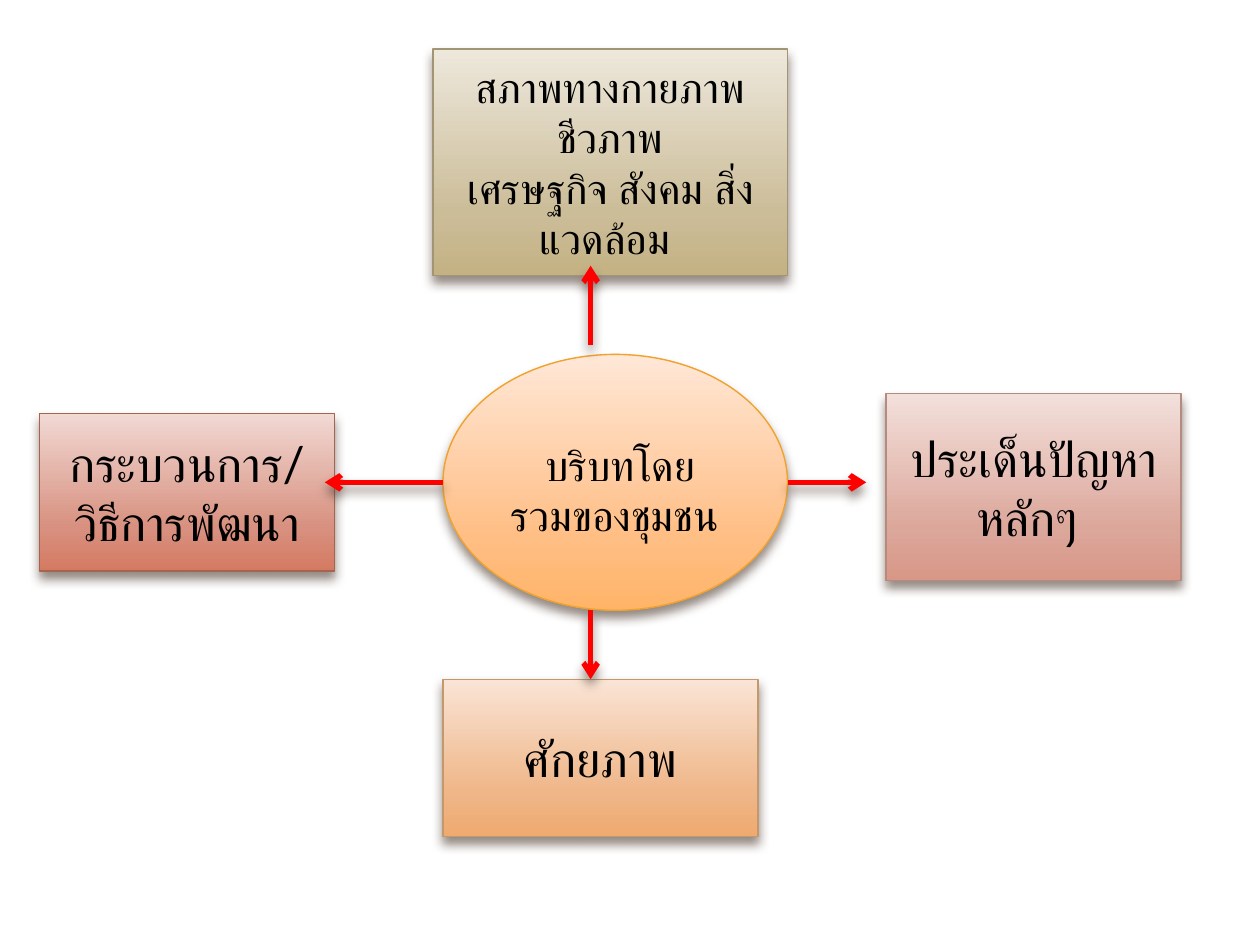
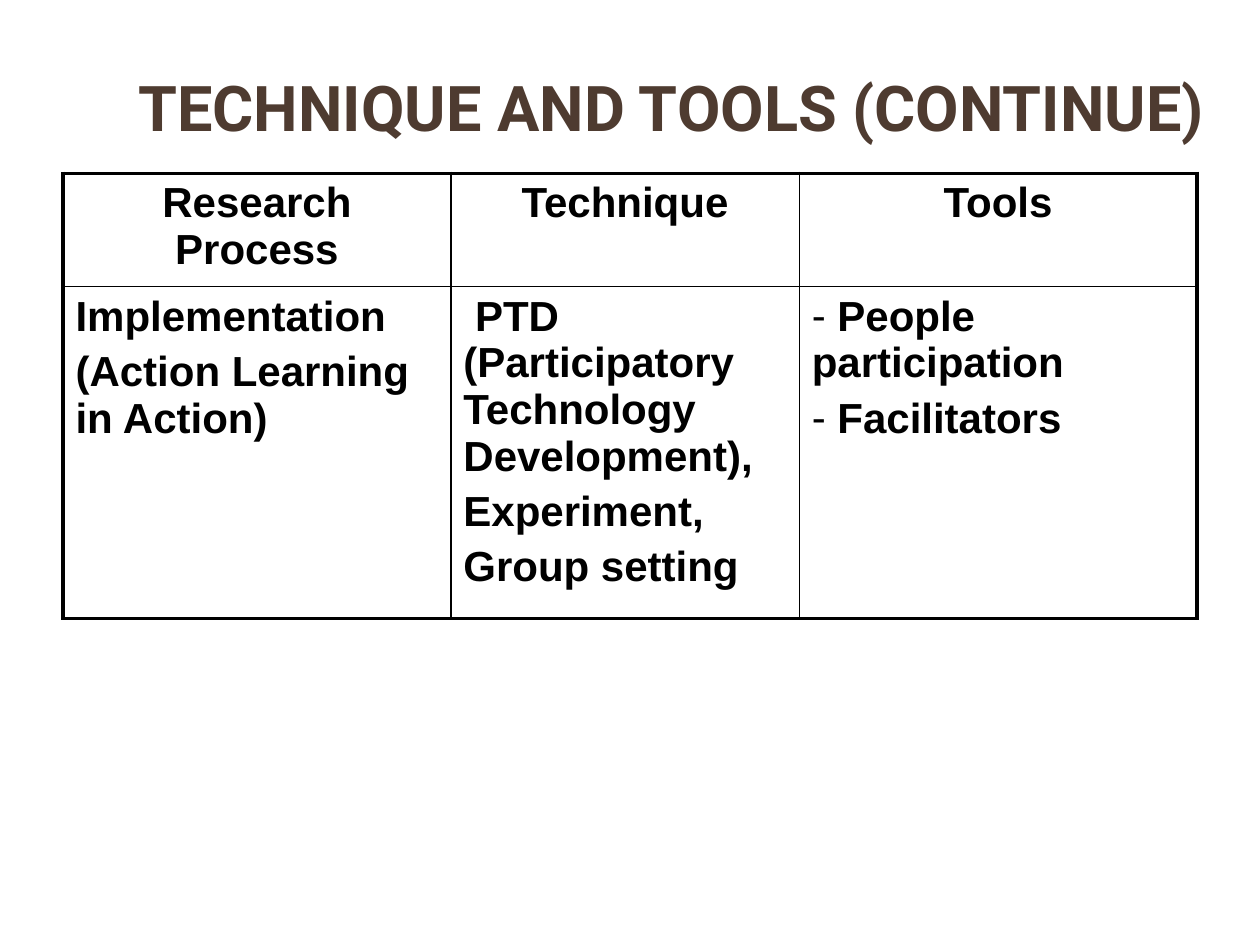
from dataclasses import dataclass
from typing import Any

from lxml.etree import SubElement
from pptx import Presentation
from pptx.dml.color import RGBColor
from pptx.enum.shapes import MSO_CONNECTOR, MSO_SHAPE
from pptx.enum.text import MSO_ANCHOR, PP_ALIGN
from pptx.oxml import parse_xml
from pptx.oxml.ns import nsdecls, qn
from pptx.util import Inches, Pt

# The slide is laid out on a grid of 128 columns by 96 rows.
SLIDE_WIDTH, SLIDE_HEIGHT = Inches(10), Inches(7.5)
COLUMN, ROW = SLIDE_WIDTH / 128, SLIDE_HEIGHT / 96

COLOURS = {
    "background": "FFFFFF",
    "text": "000000",
    "brown": "4E3B30",
    "arrow": "FF0000",
}
GRADIENTS = {
    "orange": ("FFE7D7", "FFBE84", "FFB468"),
    "khaki": ("EDE8DC", "CCBD99", "C4B284"),
    "rose": ("F3E0DB", "DCA79B", "D89787"),
    "amber": ("FAE4D5", "EFB688", "EFAA6F"),
    "brick": ("F1D9D4", "D89180", "D47A62"),
}
OUTLINES = {
    "orange": "F0A22E",
    "khaki": "A19574",
    "rose": "B58B80",
    "amber": "C3986D",
    "brick": "A5644E",
}
GRADIENT_STOPS = (0, 72, 100)

THAI_FORMAT = {"name": "Lato", "size": Pt(28)}
SMALL_THAI_FORMAT = THAI_FORMAT | {"size": Pt(24)}
TITLE_FORMAT = {"name": "Roboto", "size": Pt(36), "bold": True}
TABLE_FORMAT = {"name": "Arial", "size": Pt(24), "bold": True}


@dataclass(frozen=True)
class Area:
    """A place on the grid, in columns and rows."""
    column: float
    row: float
    columns: float
    rows: float

    def lengths(self) -> tuple[int, ...]:
        return (round(self.column * COLUMN), round(self.row * ROW),
                round(self.columns * COLUMN), round(self.rows * ROW))


@dataclass(frozen=True)
class Topic:
    area: Area
    palette: str
    lines: tuple[str, ...] = ()
    text_format: dict[str, Any] | None = None
    outline: MSO_SHAPE = MSO_SHAPE.RECTANGLE


@dataclass(frozen=True)
class Arrow:
    start: tuple[float, float]
    end: tuple[float, float]


COMMUNITY = Topic(Area(45, 36, 35, 26), "orange", outline=MSO_SHAPE.OVAL)
COMMUNITY_LABEL = Area(41, 44, 44, 11.65)
COMMUNITY_LINES = ("บริบทโดย", "รวมของชุมชน ")

TOPICS = (
    Topic(Area(44, 5, 36, 23), "khaki",
          ("สภาพทางกายภาพ", "ชีวภาพ", "เศรษฐกิจ สังคม สิ่งแวดล้อม "),
          SMALL_THAI_FORMAT),
    Topic(Area(90, 40, 30, 19), "rose", ("ประเด็นปัญหาหลักๆ ",), THAI_FORMAT),
    Topic(Area(45, 69, 32, 16), "amber", ("ศักยภาพ",), THAI_FORMAT),
    Topic(Area(4, 42, 30, 16), "brick", ("กระบวนการ/วิธีการพัฒนา",), THAI_FORMAT),
)
ARROWS = (
    Arrow((60, 35), (60, 27)),
    Arrow((80, 49), (88, 49)),
    Arrow((60, 62), (60, 69)),
    Arrow((45, 49), (33, 49)),
)

TITLE_AREA = Area(12.8, 5.6, 115.2, 10.4)
TABLE_AREA = Area(6.4, 17.6, 115.2, 42.4)
TABLE_COLUMNS = (39.4, 35.4, 40.4)
TABLE_ROWS = (10.75, 31.65)
TABLE_TEXT = (
    (("Research Process",), ("Technique",), ("Tools",)),
    (("Implementation", "(Action Learning in Action)"),
     (" PTD (Participatory Technology Development),", "Experiment,", "Group setting"),
     (" People participation", " Facilitators")),
)
BULLETED_CELL = (1, 2)


def rgb(colour: str) -> RGBColor:
    return RGBColor.from_string(colour)


def write_lines(frame, lines, text_format, colour="text", align=None, space_before=None):
    """Write one paragraph per line."""
    frame.word_wrap = True
    for index, line in enumerate(lines):
        paragraph = frame.add_paragraph() if index else frame.paragraphs[0]
        for name, value in {"alignment": align, "space_before": space_before}.items():
            setattr(paragraph, name, value)
        run = paragraph.add_run()
        run.text = line
        for name, value in text_format.items():
            setattr(run.font, name, value)
        run.font.color.rgb = rgb(COLOURS[colour])
        SubElement(run.font._element, qn("a:cs"), typeface=text_format["name"])


def add_shadow(shape) -> None:
    properties = shape._element.spPr
    for old in properties.findall(qn("a:effectLst")):
        properties.remove(old)
    properties.append(parse_xml(
        f'<a:effectLst {nsdecls("a")}>'
        f'<a:outerShdw blurRad="{Pt(6)}" dist="{Pt(4)}" dir="5400000" rotWithShape="0">'
        f'<a:srgbClr val="{COLOURS["brown"]}"><a:alpha val="60000"/></a:srgbClr>'
        '</a:outerShdw></a:effectLst>'))


def fill_gradient(shape, palette: str) -> None:
    stops = "".join(
        f'<a:gs pos="{position * 1000}"><a:srgbClr val="{colour}"/></a:gs>'
        for position, colour in zip(GRADIENT_STOPS, GRADIENTS[palette]))
    shape._element.spPr.find(qn("a:prstGeom")).addnext(parse_xml(
        f'<a:gradFill {nsdecls("a")} rotWithShape="1"><a:gsLst>{stops}</a:gsLst>'
        '<a:lin ang="5400000" scaled="0"/></a:gradFill>'))


def add_topic(slide, topic: Topic) -> None:
    shape = slide.shapes.add_shape(topic.outline, *topic.area.lengths())
    shape.shadow.inherit = False
    fill_gradient(shape, topic.palette)
    shape.line.color.rgb = rgb(OUTLINES[topic.palette])
    shape.line.width = Pt(0.79)
    add_shadow(shape)
    if topic.lines:
        shape.text_frame.vertical_anchor = MSO_ANCHOR.MIDDLE
        write_lines(shape.text_frame, topic.lines, topic.text_format,
                    align=PP_ALIGN.CENTER)


def add_arrow(slide, arrow: Arrow) -> None:
    ends = [round(place * unit) for point in (arrow.start, arrow.end)
            for place, unit in zip(point, (COLUMN, ROW))]
    connector = slide.shapes.add_connector(MSO_CONNECTOR.STRAIGHT, *ends)
    connector.line.color.rgb = rgb(COLOURS["arrow"])
    connector.line.width = Pt(3)
    SubElement(connector.line._get_or_add_ln(), qn("a:tailEnd"), type="arrow")
    add_shadow(connector)


def add_text(slide, area: Area, lines, text_format, anchor=MSO_ANCHOR.TOP, **style):
    frame = slide.shapes.add_textbox(*area.lengths()).text_frame
    frame.vertical_anchor = anchor
    write_lines(frame, lines, text_format, **style)


def set_borders(cell, outer_sides: dict[str, bool]) -> None:
    """Draw thick lines on the outer sides of the table, thin ones inside."""
    properties = cell._tc.get_or_add_tcPr()
    for index, (side, is_outer) in enumerate(outer_sides.items()):
        width = Pt(2.25 if is_outer else 1)
        properties.insert(index, parse_xml(
            f'<a:{side} {nsdecls("a")} w="{width}"><a:solidFill>'
            f'<a:srgbClr val="{COLOURS["text"]}"/></a:solidFill></a:{side}>'))


def add_dashes(frame) -> None:
    for paragraph in frame.paragraphs:
        properties = paragraph._p.get_or_add_pPr()
        SubElement(properties, qn("a:buFont"), typeface=TABLE_FORMAT["name"])
        SubElement(properties, qn("a:buChar"), char="-")


def add_technique_table(slide) -> None:
    last_row, last_column = len(TABLE_ROWS) - 1, len(TABLE_COLUMNS) - 1
    table = slide.shapes.add_table(
        len(TABLE_ROWS), len(TABLE_COLUMNS), *TABLE_AREA.lengths()).table
    for column, columns in zip(table.columns, TABLE_COLUMNS):
        column.width = round(columns * COLUMN)
    for row, rows in zip(table.rows, TABLE_ROWS):
        row.height = round(rows * ROW)
    for row, row_text in enumerate(TABLE_TEXT):
        for column, lines in enumerate(row_text):
            cell = table.cell(row, column)
            cell.fill.background()
            write_lines(cell.text_frame, lines, TABLE_FORMAT,
                        align=PP_ALIGN.LEFT if row else PP_ALIGN.CENTER,
                        space_before=Pt(4.8))
            set_borders(cell, {"lnL": column == 0, "lnR": column == last_column,
                               "lnT": row == 0, "lnB": row == last_row})
            if (row, column) == BULLETED_CELL:
                add_dashes(cell.text_frame)


def add_blank_slide(deck):
    slide = deck.slides.add_slide(deck.slide_layouts[6])
    slide.background.fill.solid()
    slide.background.fill.fore_color.rgb = rgb(COLOURS["background"])
    return slide


def build_context_slide(deck) -> None:
    slide = add_blank_slide(deck)
    add_topic(slide, COMMUNITY)
    add_text(slide, COMMUNITY_LABEL, COMMUNITY_LINES, SMALL_THAI_FORMAT,
             align=PP_ALIGN.CENTER)
    for topic in TOPICS:
        add_topic(slide, topic)
    for arrow in ARROWS:
        add_arrow(slide, arrow)


def build_technique_slide(deck) -> None:
    slide = add_blank_slide(deck)
    add_text(slide, TITLE_AREA, ("TECHNIQUE AND TOOLS (CONTINUE)",), TITLE_FORMAT,
             anchor=MSO_ANCHOR.MIDDLE, colour="brown")
    add_technique_table(slide)


def main() -> None:
    deck = Presentation()
    deck.slide_width, deck.slide_height = SLIDE_WIDTH, SLIDE_HEIGHT
    build_context_slide(deck)
    build_technique_slide(deck)
    deck.save("out.pptx")


if __name__ == "__main__":
    main()
